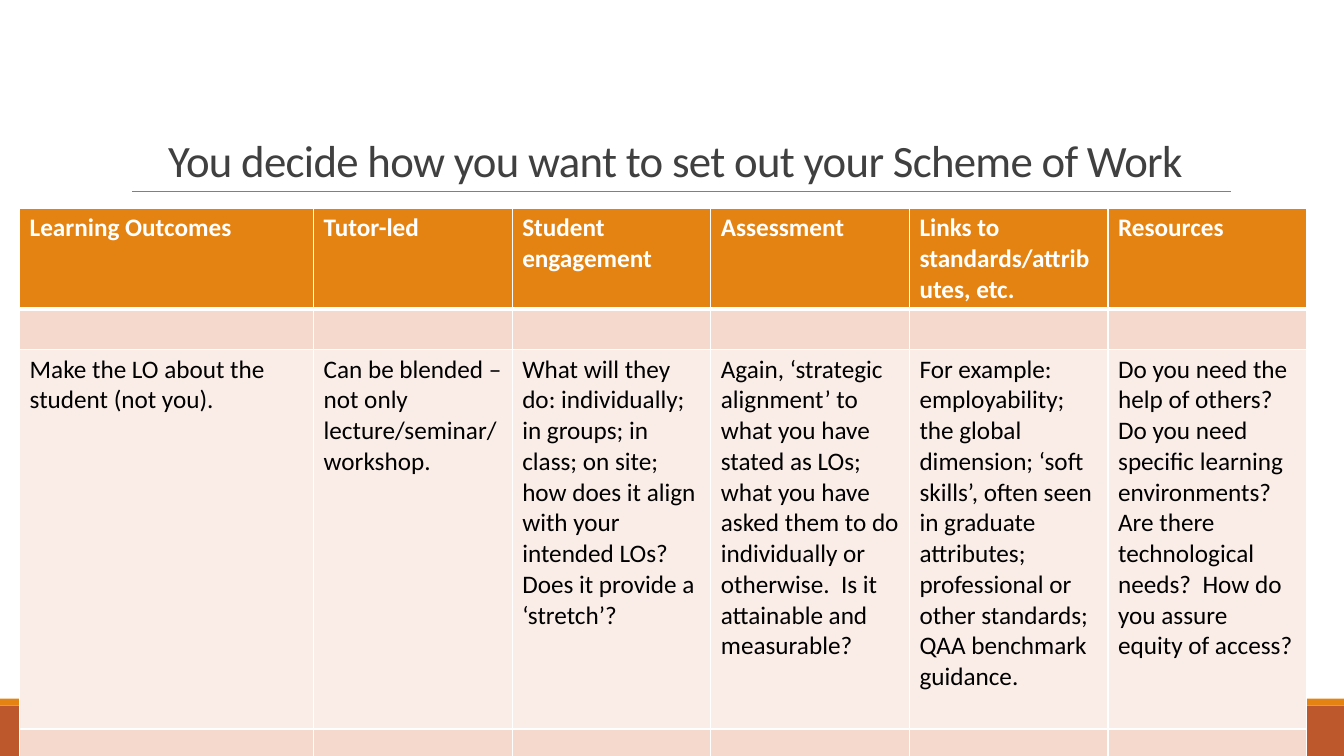
from dataclasses import dataclass

from lxml.etree import SubElement
from pptx import Presentation
from pptx.dml.color import RGBColor
from pptx.enum.shapes import MSO_CONNECTOR as Connector, MSO_SHAPE as Shape
from pptx.enum.text import MSO_ANCHOR as Anchor, PP_ALIGN as Align
from pptx.oxml.ns import qn
from pptx.util import Pt


@dataclass(frozen=True)
class Theme:
    """Colours, font and type sizes of the slide."""
    font: str = "Calibri"
    title_size: int = 32
    body_size: int = 18
    title: str = "404040"
    rule: str = "808080"
    accent: str = "E48312"
    footer: str = "BD582C"
    white: str = "FFFFFF"
    black: str = "000000"
    band: str = "F5D9CC"
    pale: str = "FAEDE7"


THEME = Theme()
WIDTH, HEIGHT = 960, 540
HEADINGS = ["Learning Outcomes", "Tutor-led", "Student engagement", "Assessment",
            "Links to standards/attributes, etc.", "Resources"]
GUIDANCE = [
    "Make the LO about the student (not you).",
    "Can be blended – not only lecture/seminar/workshop.",
    "What will they do: individually; in groups; in class; on site; how does it align "
    "with your intended LOs?  Does it provide a ‘stretch’?",
    "Again, ‘strategic alignment’ to what you have stated as LOs; what you have asked "
    "them to do individually or otherwise.  Is it attainable and measurable?",
    "For example: employability; the global dimension; ‘soft skills’, often seen in "
    "graduate attributes; professional or other standards; QAA benchmark guidance.",
    "Do you need the help of others?  Do you need specific learning environments?   "
    "Are there technological needs?  How do you assure equity of access?",
]
BLANK = [""] * len(HEADINGS)
ROWS = [
    (67.68, HEADINGS, THEME.accent, THEME.white, True),
    (27.36, BLANK, THEME.band, THEME.black, False),
    (271.44, GUIDANCE, THEME.pale, THEME.black, False),
    (27.36, BLANK, THEME.band, THEME.black, False),
]


def colour(value):
    """Turn a hex string into a colour."""
    return RGBColor.from_string(value)


def style_font(font, size, value, bold=False):
    """Apply the theme font with a size, colour and weight."""
    font.name, font.size, font.bold = THEME.font, Pt(size), bold
    font.color.rgb = colour(value)


def add_footer(slide, left, top, width, height):
    """Draw the footer band with its thin accent strip along the top."""
    strip = 5
    for offset, depth, value in ((strip, height - strip, THEME.footer), (0, strip, THEME.accent)):
        band = slide.shapes.add_shape(
            Shape.RECTANGLE, Pt(left), Pt(top + offset), Pt(width), Pt(depth))
        band.shadow.inherit = False
        band.fill.solid()
        band.fill.fore_color.rgb = colour(value)
        band.line.fill.background()


def add_title(slide, left, top, width, height):
    """Place the title at the bottom of its box, above a thin rule."""
    inset = 8
    base = Pt(top + height)
    rule = slide.shapes.add_connector(
        Connector.STRAIGHT, Pt(left + inset), base, Pt(left + width + 1), base)
    rule.line.color.rgb = colour(THEME.rule)
    rule.line.width = Pt(0.5)
    SubElement(rule._element.spPr, qn("a:effectLst"))

    frame = slide.shapes.add_textbox(Pt(left), Pt(top), Pt(width), Pt(height)).text_frame
    frame.word_wrap = True
    frame.vertical_anchor = Anchor.BOTTOM
    frame.text = "You decide how you want to set out your Scheme of Work"
    paragraph = frame.paragraphs[0]
    paragraph.alignment = Align.CENTER
    paragraph.line_spacing = 0.85
    run = paragraph.runs[0]
    style_font(run.font, THEME.title_size, THEME.title)
    run.font._element.set("spc", "-50")


def add_borders(cell, bottom_width):
    """Give a cell white borders, ahead of its fill in the XML."""
    properties = cell._tc.get_or_add_tcPr()
    widths = {"lnL": 1, "lnR": 1, "lnT": 1, "lnB": bottom_width}
    for side, width in widths.items():
        line = SubElement(properties, qn(f"a:{side}"), w=str(Pt(width)))
        fill = SubElement(line, qn("a:solidFill"))
        SubElement(fill, qn("a:srgbClr"), val=THEME.white)


def add_scheme_table(slide, left, top, width, height):
    """Build the scheme of work with a wide first column and equal others."""
    table = slide.shapes.add_table(
        len(ROWS), len(HEADINGS), Pt(left), Pt(top), Pt(width), Pt(height)).table
    table.horz_banding = False
    first_width = 210
    other_width = (width - first_width) / (len(HEADINGS) - 1)
    for index, column in enumerate(table.columns):
        column.width = Pt(other_width if index else first_width)
    for row, (row_height, texts, fill, ink, is_header) in zip(table.rows, ROWS):
        row.height = Pt(row_height)
        for cell, text in zip(row.cells, texts):
            add_borders(cell, 3 if is_header else 1)
            cell.fill.solid()
            cell.fill.fore_color.rgb = colour(fill)
            cell.text = text
            for run in cell.text_frame.paragraphs[0].runs:
                style_font(run.font, THEME.body_size, ink, is_header)


def main():
    """Create the presentation and save it."""
    presentation = Presentation()
    presentation.slide_width, presentation.slide_height = Pt(WIDTH), Pt(HEIGHT)
    slide = presentation.slides.add_slide(presentation.slide_layouts[6])
    add_footer(slide, 0, HEIGHT - 41, WIDTH, 41)
    add_title(slide, 86.4, 22.4, 792, 114.4)
    add_scheme_table(slide, 14, 148.5, 919.5, sum(row[0] for row in ROWS))
    presentation.save("out.pptx")


if __name__ == "__main__":
    main()
